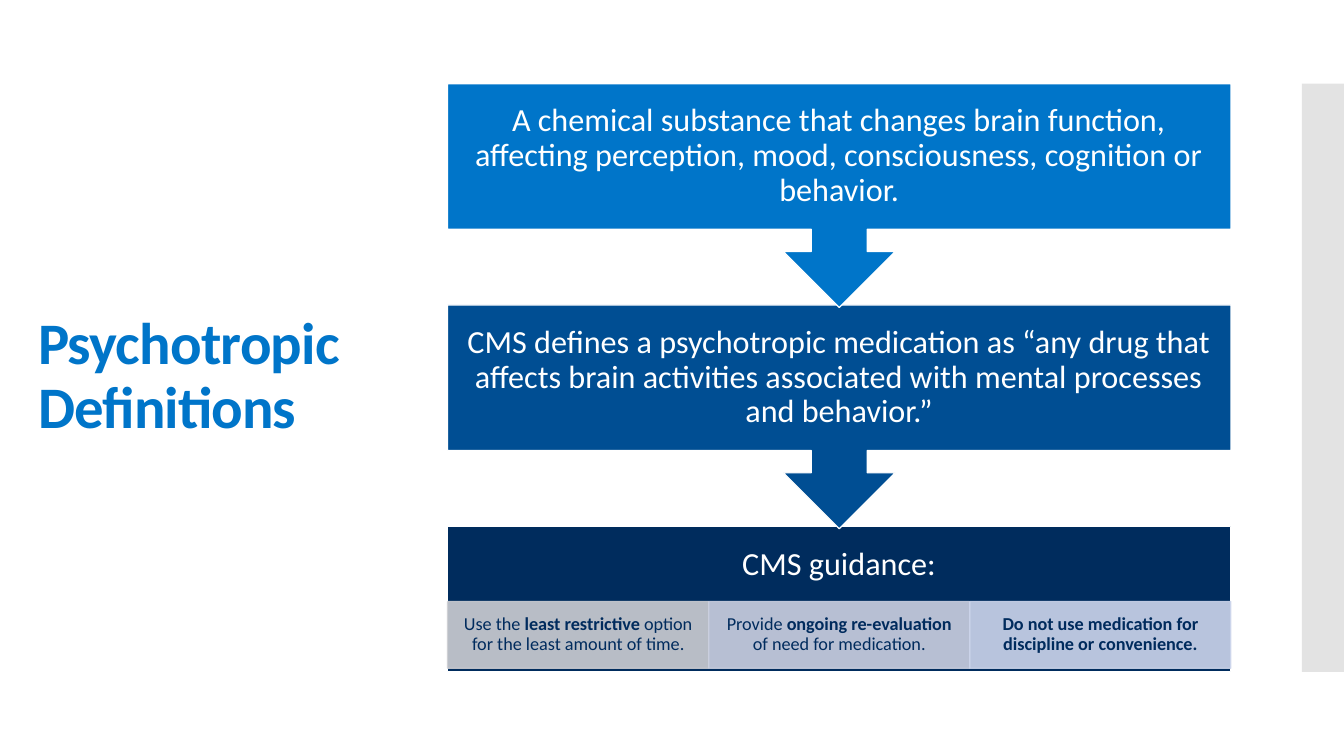
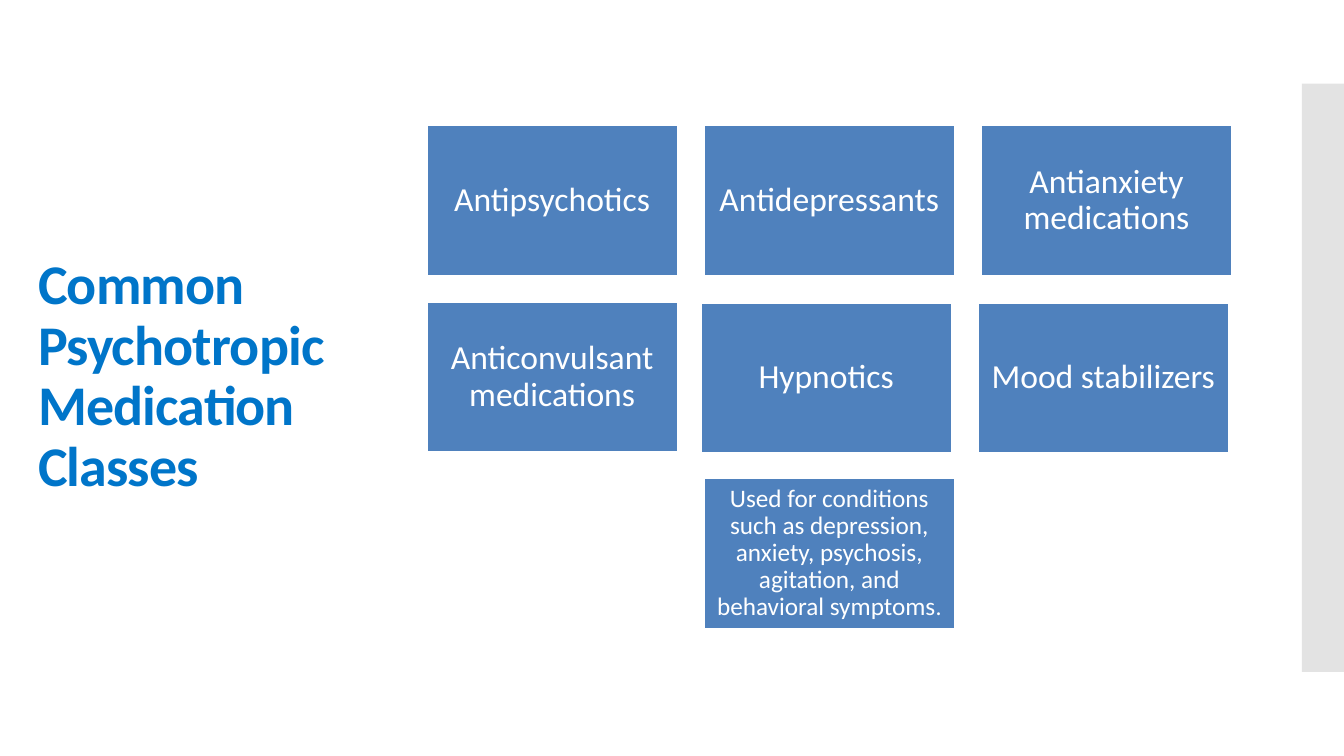
from pptx import Presentation
from pptx import util as u
from pptx.dml import color
from pptx.enum import shapes, text
from pptx.oxml import ns
from lxml import etree

FONT = "Calibri"
WHITE, BRIGHT, MEDIUM, NAVY = "FFFFFF", "0075C9", "004E93", "002C5D"
CARD_TEXT, TILE, BAND = "002B5D", "4F81BD", "C8C8C8"

PAGE_W, PAGE_H = 33.87, 19.05
BAND_BOX = (32.81, 2.11, 1.06, 14.82)
TITLE_LEFT, TITLE_TOP, TITLE_H = 0.71, 3.12, 12.78

DEFINITIONS = [
    (BRIGHT, "A chemical substance that changes brain function, affecting "
             "perception, mood, consciousness, cognition or behavior."),
    (MEDIUM, "CMS defines a psychotropic medication as “any drug that affects "
             "brain activities associated with mental processes and behavior.”"),
]
# Each card: fill and its runs as (text, bold)
GUIDANCE = [
    ("CCCDD2", [("Use the ", False), ("least restrictive ", True),
                ("option for the least amount of time.", False)]),
    ("CBD0E0", [("Provide ", False), ("ongoing re-evaluation ", True),
                ("of need for medication.", False)]),
    ("CCD5EB", [("Do not use medication for discipline or convenience.", True)]),
]
# Each class: column, row, horizontal and vertical nudge, name
CLASSES = [
    (0, 0, 0, 0, "Antipsychotics"),
    (1, 0, 0, 0, "Antidepressants"),
    (2, 0, 0, 0, "Antianxiety medications"),
    (0, 1, 0, 0, "Anticonvulsant medications"),
    (1, 1, -0.08, 0.02, "Hypnotics"),
    (2, 1, -0.08, 0.02, "Mood stabilizers"),
]
USES = "Used for conditions such as depression, anxiety, psychosis, agitation, and behavioral symptoms"


def rgb(value):
    return color.RGBColor.from_string(value)


def cm(*lengths):
    return [u.Cm(length) for length in lengths]


def add_block(page, box, fill, line=None, width=0.85, opacity=None,
              kind=shapes.MSO_SHAPE.RECTANGLE):
    """Add a flat preset shape; opacity is a percentage for fill and line."""
    block = page.shapes.add_shape(kind, *cm(*box))
    block.shadow.inherit = False
    block.fill.solid()
    block.fill.fore_color.rgb = rgb(fill)
    if line:
        block.line.color.rgb = rgb(line)
        block.line.width = u.Pt(width)
    else:
        block.line.fill.background()
    if opacity:
        for paint in block.element.spPr.iter(ns.qn("a:srgbClr")):
            etree.SubElement(paint, ns.qn("a:alpha"), val=str(opacity * 1000))
    return block


def add_textbox(page, box):
    return page.shapes.add_textbox(*cm(*box))


def write(shape, spans, fill, inset, align=text.PP_ALIGN.CENTER, spacing=None):
    """Fill a shape with one paragraph of (text, size, bold) spans."""
    frame = shape.text_frame
    frame.word_wrap = True
    frame.vertical_anchor = text.MSO_ANCHOR.MIDDLE
    frame.margin_left, frame.margin_top, frame.margin_right, frame.margin_bottom = cm(*inset)
    para = frame.paragraphs[0]
    para.alignment = align
    para.line_spacing = 0.9
    for words, size, bold in spans:
        span = para.add_run()
        span.text = words
        span.font.name = FONT
        span.font.size = u.Pt(size)
        span.font.bold = bold
        span.font.color.rgb = rgb(fill)
        if spacing:
            span.font._element.set("spc", str(spacing))


def add_page(deck, title, size, title_width):
    """Start a slide with the shared side band and title."""
    page = deck.slides.add_slide(deck.slide_layouts[6])
    add_block(page, BAND_BOX, BAND, opacity=50)
    heading = add_textbox(page, (TITLE_LEFT, TITLE_TOP, title_width, TITLE_H))
    write(heading, [(title, size, True)], BRIGHT, (0.25, 0.13, 0.25, 0.13),
          text.PP_ALIGN.LEFT, -60)
    return page


def add_stage_text(page, box, words):
    write(add_textbox(page, box), [(words, 23, False)], WHITE, [0.46] * 4)


def add_guidance(page, box):
    left, top, width, height = box
    add_block(page, box, NAVY, WHITE)
    add_stage_text(page, (left, top, width, 1.98), "CMS guidance:")
    card_width = width / len(GUIDANCE)
    for index, (fill, parts) in enumerate(GUIDANCE):
        card_box = (left + index * card_width, top + 1.9, card_width, 1.68)
        card = add_block(page, card_box, fill, fill, opacity=90)
        spans = [(words, 13, bold) for words, bold in parts]
        write(card, spans, CARD_TEXT, (0.25, 0.05, 0.25, 0.05))


def add_definition_flow(page, box):
    left, top, width, height = box
    body, callout = 3.66, 5.64
    pitch = (height - body) / len(DEFINITIONS)
    add_guidance(page, (left, top + height - body, width, body))
    for index, (fill, words) in reversed(list(enumerate(DEFINITIONS))):
        stage_top = top + index * pitch
        arrow = add_block(page, (left, stage_top, width, callout), fill, WHITE,
                          kind=shapes.MSO_SHAPE.UP_ARROW_CALLOUT)
        arrow.rotation = 180
        add_stage_text(page, (left, stage_top, width, body), words)


def add_class_grid(page, box):
    left, top, width, height = box
    tile_w, tile_h = 6.35, 3.81
    pitch_x, pitch_y = (width - tile_w) / 2, (height - tile_h) / 2

    def add_tile(column, row, nudge_x, nudge_y, spans, inset):
        tile_box = (left + column * pitch_x + nudge_x,
                    top + row * pitch_y + nudge_y, tile_w, tile_h)
        write(add_block(page, tile_box, TILE, WHITE, 2), spans, WHITE, [inset] * 4)

    for column, row, nudge_x, nudge_y, name in CLASSES:
        add_tile(column, row, nudge_x, nudge_y, [(name, 24, False)], 0.25)
    add_tile(1, 2, 0, 0, [(USES, 18, False), (".", 17, False)], 0.18)


def main():
    deck = Presentation()
    deck.slide_width, deck.slide_height = cm(PAGE_W, PAGE_H)
    page = add_page(deck, "Psychotropic Definitions", 42, 8.97)
    add_definition_flow(page, (11.28, 2.11, 19.74, 14.81))
    page = add_page(deck, "Common Psychotropic Medication Classes", 40, 8.18)
    add_class_grid(page, (10.74, 3.15, 20.32, 12.7))
    deck.save("out.pptx")


if __name__ == "__main__":
    main()
